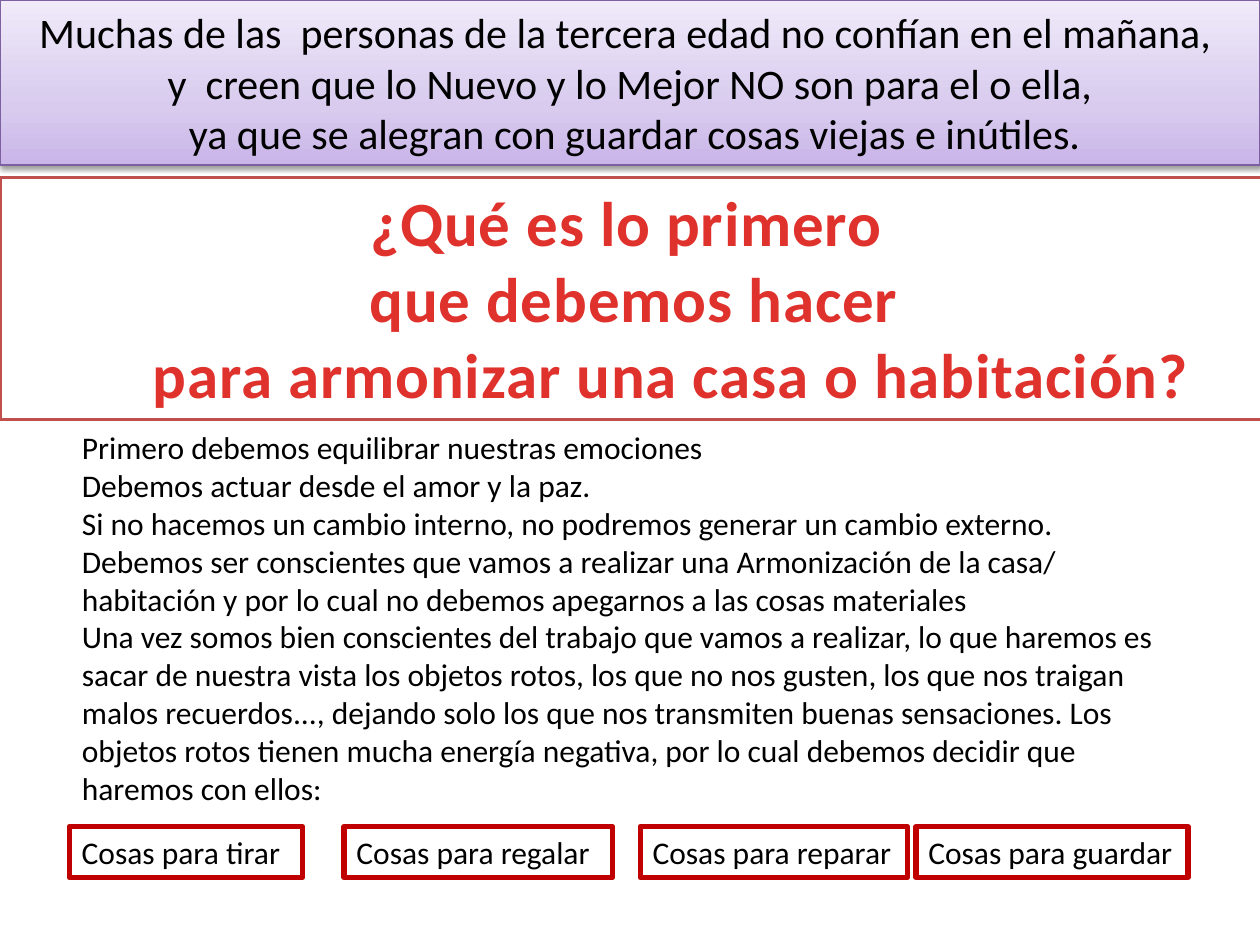
from copy import deepcopy

from lxml import etree
from pptx import Presentation
from pptx import util as u
from pptx.dml.color import RGBColor
from pptx.enum import shapes, text
from pptx.oxml.ns import qn

Pt = u.Pt
FONT = "Calibri"
COLORS = {
    "text": "000000",
    "white": "FFFFFF",
    "question_line": "C0504D",
    "question_top": "E0322D",
    "question_bottom": "A2201C",
    "label_line": "C00000",
    "banner_dark": "C9B5E8",
    "banner_mid": "D8CBEE",
    "banner_light": "F0EAF9",
    "banner_line": "7D60A0",
}

BANNER = [
    "Muchas de las  personas de la tercera edad no confían en el mañana, ",
    "y  creen que lo Nuevo y lo Mejor NO son para el o ella,",
    " ya que se alegran con guardar cosas viejas e inútiles.",
]
QUESTION = [
    "¿Qué es lo primero ",
    "que debemos hacer",
    "para armonizar una casa o habitación?",
]
ADVICE = [
    "Primero debemos equilibrar nuestras emociones",
    "Debemos actuar desde el amor y la paz.",
    "Si no hacemos un cambio interno, no podremos generar un cambio externo.",
    "Debemos ser conscientes que vamos a realizar una Armonización de la casa/ "
    "habitación y por lo cual no debemos apegarnos a las cosas materiales",
    "Una vez somos bien conscientes del trabajo que vamos a realizar, lo que "
    "haremos es sacar de nuestra vista los objetos rotos, los que no nos gusten, "
    "los que nos traigan malos recuerdos..., dejando solo los que nos transmiten "
    "buenas sensaciones. Los objetos rotos tienen mucha energía negativa, por lo "
    "cual debemos decidir que haremos con ellos:",
]
# Text, left and width of each label
LABELS = [
    ("Cosas para tirar", 39.6, 133.2),
    ("Cosas para regalar", 196.6, 153.4),
    ("Cosas para reparar", 365.8, 152.6),
    ("Cosas para guardar", 523.4, 155.5),
]


def rgb(name):
    return RGBColor.from_string(COLORS[name])


def place(box, left, top, width, height):
    box.left, box.top, box.width, box.height = map(Pt, (left, top, width, height))


def outline(box, color, width):
    box.line.color.rgb = rgb(color)
    box.line.width = Pt(width)


def set_gradient(fill, holder, stops, angle):
    """Give a fill any number of (position, colour) stops."""
    fill.gradient()
    fill.gradient_angle = angle
    stop_list = holder.find(".//" + qn("a:gsLst"))
    for _ in stops[2:]:
        stop_list.append(deepcopy(stop_list[0]))
    for stop, (position, color) in zip(fill.gradient_stops, stops):
        stop.position = position
        stop.color.rgb = rgb(color)


def write(box, lines, size, align, anchor=text.MSO_ANCHOR.TOP):
    frame = box.text_frame
    frame.text = "\n".join(lines)
    frame.word_wrap = True
    frame.auto_size = text.MSO_AUTO_SIZE.NONE
    frame.vertical_anchor = anchor
    for line in frame.paragraphs:
        line.alignment = align
        line.space_before = Pt(0)
        line.font.name = FONT
        line.font.size = Pt(size)
        line.font.color.rgb = rgb("text")
    return frame.paragraphs


def add_shadow(box):
    effects = etree.SubElement(box._element.spPr, qn("a:effectLst"))
    shadow = etree.SubElement(
        effects, qn("a:outerShdw"), blurRad=str(Pt(3.1)), dist=str(Pt(1.6)),
        dir="5400000", rotWithShape="0")
    color = etree.SubElement(shadow, qn("a:srgbClr"), val="000000")
    etree.SubElement(color, qn("a:alpha"), val="38000")


def add_banner(slide):
    banner = slide.shapes.add_shape(
        shapes.MSO_SHAPE.RECTANGLE, Pt(0), Pt(0), Pt(720), Pt(94.3))
    stops = [(0, "banner_dark"), (0.35, "banner_mid"), (1, "banner_light")]
    set_gradient(banner.fill, banner._element.spPr, stops, 90)
    outline(banner, "banner_line", 0.75)
    add_shadow(banner)
    write(banner, BANNER, 24, text.PP_ALIGN.CENTER, text.MSO_ANCHOR.MIDDLE)


def fill_question(title):
    place(title, 0, 101.5, 724.5, 138.2)
    title.fill.solid()
    title.fill.fore_color.rgb = rgb("white")
    outline(title, "question_line", 2)
    lines = write(title, QUESTION, 36, text.PP_ALIGN.CENTER)
    stops = [(0.25, "question_top"), (1, "question_bottom")]
    for line in lines:
        line.font.bold = True
        properties = line._p.get_or_add_pPr()
        set_gradient(line.font.fill, properties, stops, 270)
        properties.find(qn("a:defRPr")).set("spc", "50")
    # The last line sits a little to the right of centre
    lines[-1]._p.pPr.set("marL", str(Pt(43)))


def fill_advice(body):
    place(body, 39.6, 241.2, 630, 225)
    for line in write(body, ADVICE, 18, text.PP_ALIGN.LEFT):
        properties = line._p.get_or_add_pPr()
        properties.set("marL", "0")
        properties.set("indent", "0")
        properties.find(qn("a:defRPr")).addprevious(
            etree.Element(qn("a:buNone")))


def add_label(slide, caption, left, width):
    label = slide.shapes.add_textbox(Pt(left), Pt(472.3), Pt(width), Pt(29.1))
    outline(label, "label_line", 3)
    write(label, [caption], 18, text.PP_ALIGN.LEFT)


def main():
    deck = Presentation()
    deck.slide_width, deck.slide_height = Pt(720), Pt(540)
    slide = deck.slides.add_slide(deck.slide_layouts[1])

    # Question and advice
    fill_question(slide.shapes.title)
    fill_advice(slide.placeholders[1])

    # What to do with the objects
    for caption, left, width in LABELS:
        add_label(slide, caption, left, width)

    # Opening statement
    add_banner(slide)
    deck.save("out.pptx")


if __name__ == "__main__":
    main()
